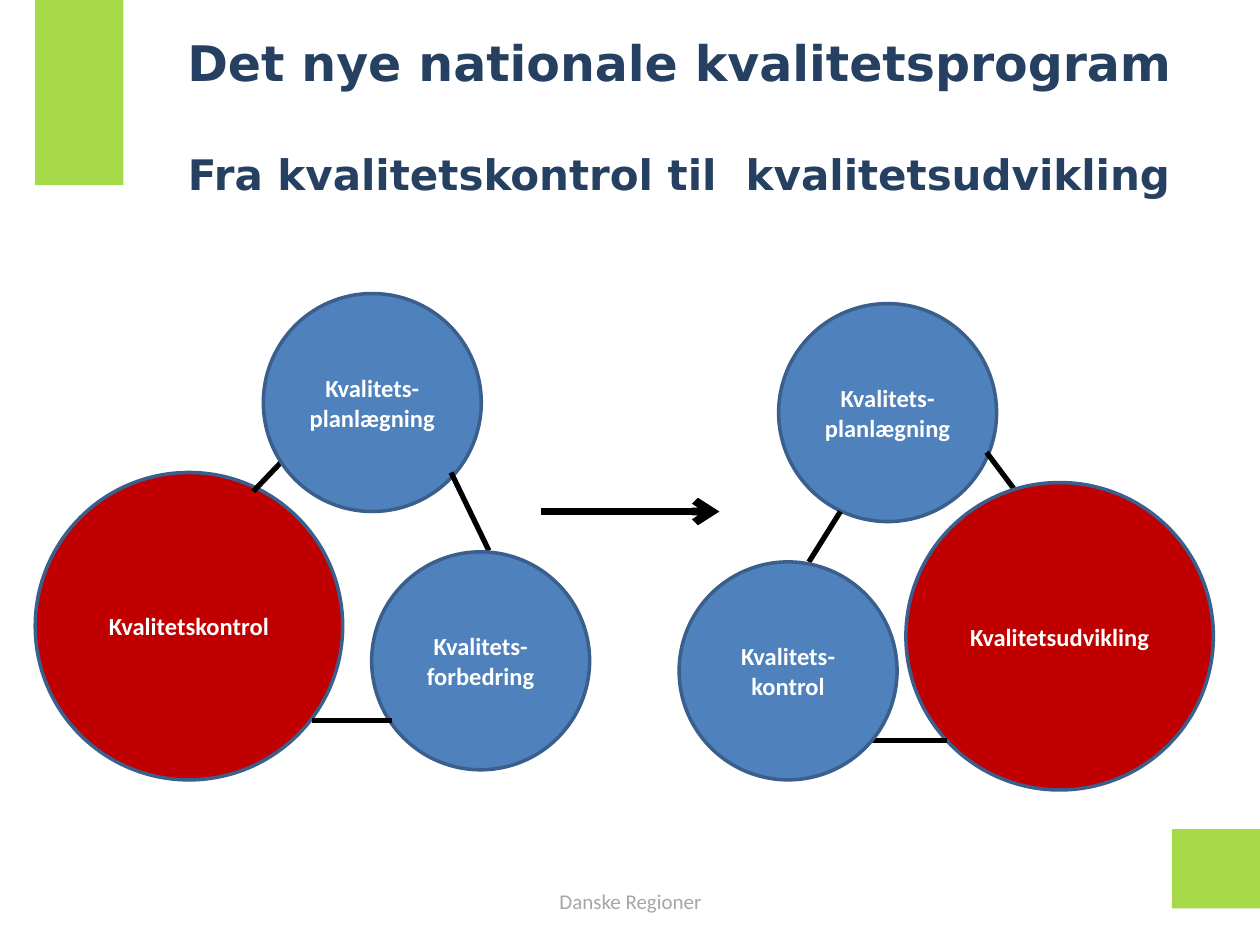
from lxml import etree
from pptx import Presentation
from pptx.dml.color import RGBColor
from pptx.enum import shapes, text
from pptx.oxml import ns
from pptx.util import Inches, Pt

COLORS = {
    "green": "A5D947", "navy": "254061", "blue": "4F81BD", "red": "C00000",
    "outline": "3A5F8C", "black": "000000", "white": "FFFFFF", "grey": "A6A6A6",
}
SMALL, LARGE = 1.73, 2.44

# Back to front, in inches from the top left of each cycle:
# circle = (label, fill, left, top, diameter), link = (x1, y1, x2, y2)
CONTROL_CYCLE = [
    ("Kvalitetskontrol", "red", 0, 1.42, LARGE),
    (1.73, 1.57, 1.95, 1.34),
    ("Kvalitets-planlægning", "blue", 1.81, 0, SMALL),
    (3.3, 1.42, 3.6, 2.04),
    ("Kvalitets-forbedring", "blue", 2.67, 2.05, SMALL),
    (2.83, 3.39, 2.2, 3.39),
]
DEVELOPMENT_CYCLE = [
    ("Kvalitets-planlægning", "blue", 0.79, 0, SMALL),
    (1.03, 2.05, 1.28, 1.65),
    (2.44, 1.18, 2.68, 1.5),
    ("Kvalitetsudvikling", "red", 1.8, 1.42, LARGE),
    (2.13, 3.47, 1.5, 3.47),
    ("Kvalitets-kontrol", "blue", 0, 2.05, SMALL),
]


def rgb(name):
    return RGBColor.from_string(COLORS[name])


def set_all(target, values):
    for name, value in values.items():
        setattr(target, name, value)


def write(para, words, size, color, font="Calibri", bold=True):
    para.alignment = text.PP_ALIGN.CENTER
    span = para.add_run()
    span.text = words
    set_all(span.font, {"name": font, "size": Pt(size), "bold": bold})
    span.font.color.rgb = rgb(color)


def add_filled(page, kind, fill, left, top, width, height):
    shape = page.shapes.add_shape(
        kind, Inches(left), Inches(top), Inches(width), Inches(height))
    shape.shadow.inherit = False
    shape.fill.solid()
    shape.fill.fore_color.rgb = rgb(fill)
    shape.line.fill.background()
    return shape


def add_link(page, x1, y1, x2, y2, weight=3, arrow=False):
    link = page.shapes.add_connector(
        shapes.MSO_CONNECTOR.STRAIGHT, Inches(x1), Inches(y1), Inches(x2), Inches(y2))
    link.line.color.rgb = rgb("black")
    link.line.width = Pt(weight)
    if arrow:
        etree.SubElement(link.line._get_or_add_ln(), ns.qn("a:tailEnd"), type="arrow")
    etree.SubElement(link._element.spPr, ns.qn("a:effectLst"))


def add_circle(page, label, fill, left, top, size):
    circle = add_filled(page, shapes.MSO_SHAPE.OVAL, fill, left, top, size, size)
    circle.line.color.rgb = rgb("outline")
    circle.line.width = Pt(2)
    frame = circle.text_frame
    set_all(frame, {"word_wrap": True, "vertical_anchor": text.MSO_ANCHOR.MIDDLE})
    write(frame.paragraphs[0], label, 14, "white")


def add_cycle(page, left, top, parts):
    """Draw circles and links, with every part offset from the cycle's corner."""
    for part in parts:
        if isinstance(part[0], str):
            label, fill, x, y, size = part
            add_circle(page, label, fill, left + x, top + y, size)
        else:
            x1, y1, x2, y2 = part
            add_link(page, left + x1, top + y1, left + x2, top + y2)


def add_title(page, left, top, width, height):
    title = page.shapes.title
    set_all(title, {"left": Inches(left), "top": Inches(top),
                    "width": Inches(width), "height": Inches(height)})
    frame = title.text_frame
    set_all(frame, {"word_wrap": True, "auto_size": text.MSO_AUTO_SIZE.NONE,
                    "vertical_anchor": text.MSO_ANCHOR.MIDDLE})
    write(frame.paragraphs[0], "Det nye nationale kvalitetsprogram",
          28, "navy", "DejaVu Sans")
    subtitle = frame.add_paragraph()
    subtitle.space_before = Pt(33)
    write(subtitle, "Fra kvalitetskontrol til  kvalitetsudvikling",
          24, "navy", "DejaVu Sans")


def add_footer(page, left, top, width, height):
    box = page.shapes.add_textbox(
        Inches(left), Inches(top), Inches(width), Inches(height))
    frame = box.text_frame
    set_all(frame, {"word_wrap": True, "vertical_anchor": text.MSO_ANCHOR.MIDDLE})
    write(frame.paragraphs[0], "Danske Regioner", 12, "grey", bold=False)


def main():
    deck = Presentation()
    set_all(deck, {"slide_width": Inches(10), "slide_height": Inches(7.5)})
    page = deck.slides.add_slide(deck.slide_layouts.get_by_name("Title Only"))
    for box in [(0.28, 0, 0.7, 1.47), (9.3, 6.58, 0.7, 0.63)]:
        add_filled(page, shapes.MSO_SHAPE.RECTANGLE, "green", *box)
    add_title(page, 0.51, 0.21, 9.76, 1.42)
    add_footer(page, 3.42, 6.95, 3.17, 0.4)
    add_cycle(page, 0.28, 2.33, CONTROL_CYCLE)
    add_link(page, 4.29, 4.06, 5.71, 4.06, weight=4.5, arrow=True)
    add_cycle(page, 5.39, 2.41, DEVELOPMENT_CYCLE)
    deck.save("out.pptx")


if __name__ == "__main__":
    main()
